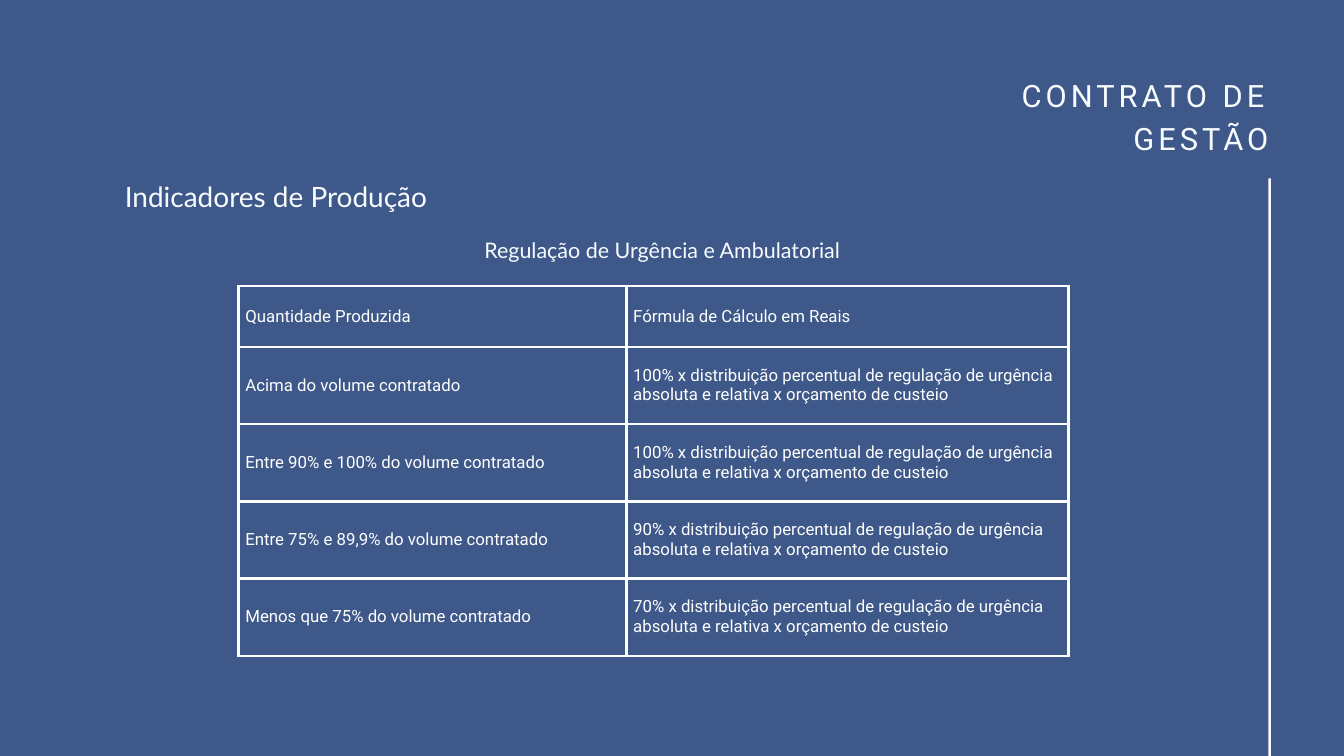
from lxml.etree import SubElement
from pptx import Presentation
from pptx.dml.color import RGBColor
from pptx.enum.shapes import MSO_SHAPE
from pptx.enum.text import MSO_ANCHOR, MSO_AUTO_SIZE, PP_ALIGN
from pptx.oxml.ns import qn
from pptx.util import Cm, Pt

COLORS = {"background": "3E5889", "light": "F9FCFF", "white": "FFFFFF"}


def style_run(span, font_name, size, color):
    span.font.name = font_name
    span.font.size = Pt(size)
    span.font.color.rgb = RGBColor.from_string(COLORS[color])


def add_borders(cell, color, width):
    properties = cell._tc.get_or_add_tcPr()
    for side in ("lnL", "lnR", "lnT", "lnB"):
        line = SubElement(properties, qn(f"a:{side}"), w=str(Pt(width)))
        fill = SubElement(line, qn("a:solidFill"))
        SubElement(fill, qn("a:srgbClr"), val=COLORS[color])


deck = Presentation()
deck.slide_width, deck.slide_height = Cm(50.8), Cm(28.58)
page = deck.slides.add_slide(deck.slide_layouts[6])
page.background.fill.solid()
page.background.fill.fore_color.rgb = RGBColor.from_string(COLORS["background"])

# Vertical rule on the right, running off the bottom edge
rule = page.shapes.add_shape(MSO_SHAPE.RECTANGLE, Cm(34.82), Cm(19.86), Cm(26.34), Cm(0.1))
rule.rotation = 90
rule.shadow.inherit = False
rule.fill.solid()
rule.fill.fore_color.rgb = RGBColor.from_string(COLORS["light"])
rule.line.fill.background()

# Table of payment bands
formula = "{} x distribuição percentual de regulação de urgência absoluta e relativa x orçamento de custeio"
rows = [
    ("Quantidade Produzida", "Fórmula de Cálculo em Reais"),
    ("Acima do volume contratado", formula.format("100%")),
    ("Entre 90% e 100% do volume contratado", formula.format("100%")),
    ("Entre 75% e 89,9% do volume contratado", formula.format("90%")),
    ("Menos que 75% do volume contratado", formula.format("70%")),
]
column_widths = (14.66, 16.71)
header_height, body_height = 2.29, 2.92
table = page.shapes.add_table(
    len(rows), len(column_widths), Cm(9.02), Cm(10.82),
    Cm(sum(column_widths)), Cm(header_height + body_height * (len(rows) - 1)),
).table
table.first_row = False
table.horz_banding = False
for column, width in zip(table.columns, column_widths):
    column.width = Cm(width)
for row_index, texts in enumerate(rows):
    table.rows[row_index].height = Cm(body_height if row_index else header_height)
    for column_index, text in enumerate(texts):
        cell = table.cell(row_index, column_index)
        cell.vertical_anchor = MSO_ANCHOR.MIDDLE
        add_borders(cell, "white", 3)
        cell.fill.background()
        cell.text_frame.text = text
        style_run(cell.text_frame.paragraphs[0].runs[0], "Roboto", 18, "white")

# Headings: text, place, alignment, font, size, line spacing, letter spacing
headings = [
    ("CONTRATO DE GESTÃO", (37.13, 2.67, 10.82, 3.18), PP_ALIGN.RIGHT, "Roboto", 33, 46.2, 4.3),
    ("Indicadores de Produção", (4.72, 6.58, 35.66, 1.42), PP_ALIGN.JUSTIFY, "Lato", 30, 42, 0),
    ("Regulação de Urgência e Ambulatorial", (14.88, 8.81, 20.32, 1.09), PP_ALIGN.CENTER, "Lato", 23, 32.2, 0),
]
for text, place, alignment, font_name, size, line_spacing, letter_spacing in headings:
    box = page.shapes.add_textbox(*map(Cm, place))
    frame = box.text_frame
    frame.word_wrap = True
    frame.auto_size = MSO_AUTO_SIZE.SHAPE_TO_FIT_TEXT
    frame.margin_left = frame.margin_right = frame.margin_top = frame.margin_bottom = 0
    frame.text = text
    para = frame.paragraphs[0]
    para.alignment = alignment
    para.line_spacing = Pt(line_spacing)
    span = para.runs[0]
    style_run(span, font_name, size, "light")
    if letter_spacing:
        span._r.get_or_add_rPr().set("spc", str(round(letter_spacing * 100)))

deck.save("out.pptx")
